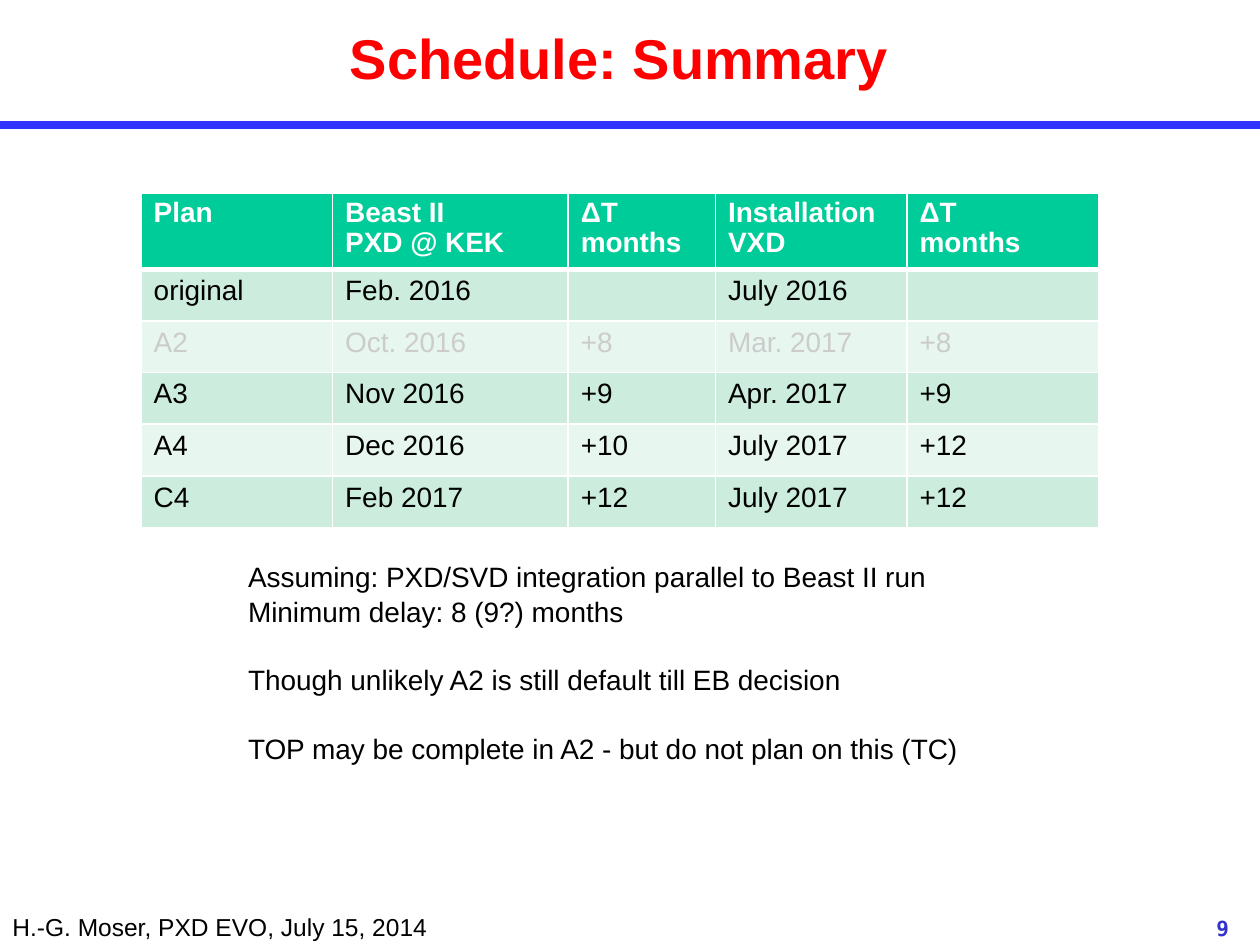
from lxml import etree
from pptx import Presentation
from pptx.dml.color import RGBColor
from pptx.enum import shapes, text
from pptx.oxml import ns
from pptx.util import Inches, Pt

HUES = {"blue": "3333FF", "page": "3333CC", "red": "FF0000", "black": "000000",
        "white": "FFFFFF", "grey": "CCCCCC", "head": "00CC99",
        "dark": "CCECDE", "light": "E7F6EF"}


def write(frame, lines, size=16, hue="black", bold=False, font="Arial",
          align=None, space=None, gaps=()):
    for i, line in enumerate(lines):
        para = frame.paragraphs[0] if i == 0 else frame.add_paragraph()
        para.alignment = align
        para.line_spacing = space
        if i in gaps:
            para.space_before = Pt(19.2)
        run = para.add_run()
        run.text = line
        run.font.size = Pt(size)
        run.font.bold = bold
        run.font.name = font
        run.font.color.rgb = RGBColor.from_string(HUES[hue])


def edge(cell, sides):
    props = cell._tc.get_or_add_tcPr()
    for i, (side, width) in enumerate(sides.items()):
        line = etree.Element(ns.qn("a:" + side), w=str(Pt(width)))
        fill = etree.SubElement(line, ns.qn("a:solidFill"))
        etree.SubElement(fill, ns.qn("a:srgbClr"), val=HUES["white"])
        props.insert(i, line)


deck = Presentation()
deck.slide_width, deck.slide_height = Inches(10), Inches(7.5)
slide = deck.slides.add_slide(deck.slide_layouts[6])

rule = slide.shapes.add_connector(shapes.MSO_CONNECTOR.STRAIGHT, Inches(0),
                                  Inches(0.99), Inches(10), Inches(0.99))
rule.line.color.rgb = RGBColor.from_string(HUES["blue"])
rule.line.width = Pt(4.5)
etree.SubElement(rule._element.spPr, ns.qn("a:effectLst"))

mid = text.PP_ALIGN.CENTER
notes = ["Assuming: PXD/SVD integration parallel to Beast II run",
         "Minimum delay: 8 (9?) months",
         "Though unlikely A2 is still default till EB decision",
         "TOP may be complete in A2 - but do not plan on this (TC)"]
boxes = [
    ((0, 7.19, 3.51, 0.34), False, ["H.-G. Moser, PXD EVO, July 15, 2014"],
     dict(size=14)),
    ((0.98, 0, 7.87, 0.91), True, ["Schedule: Summary"],
     dict(size=32, hue="red", bold=True, align=mid)),
    ((9.41, 7.22, 0.59, 0.28), True, ["9"],
     dict(size=12, hue="page", bold=True, font="DejaVu Sans Mono", align=mid)),
    ((1.87, 4.38, 5.91, 1.72), False, notes, dict(space=1.04, gaps=(2, 3))),
]
for area, wrap, lines, style in boxes:
    box = slide.shapes.add_textbox(*map(Inches, area))
    box.text_frame.word_wrap = wrap
    if lines == ["Schedule: Summary"]:
        box.text_frame.vertical_anchor = text.MSO_ANCHOR.MIDDLE
    write(box.text_frame, lines, **style)

rows = [
    ["Plan", "Beast II\nPXD @ KEK", "ΔT\nmonths", "Installation VXD", "ΔT\nmonths"],
    ["original", "Feb. 2016", "", "July 2016", ""],
    ["A2", "Oct. 2016", "+8", "Mar. 2017", "+8"],
    ["A3", "Nov 2016", "+9", "Apr. 2017", "+9"],
    ["A4", "Dec 2016", "+10", "July 2017", "+12"],
    ["C4", "Feb 2017", "+12", "July 2017", "+12"],
]
wide = [1.52, 1.87, 1.17, 1.52, 1.52]
high = 0.41
table = slide.shapes.add_table(len(rows), len(wide), Inches(1.12), Inches(1.53),
                               Inches(sum(wide)), Inches(high * len(rows))).table
for col, width in zip(table.columns, wide):
    col.width = Inches(width)
for r, row in enumerate(rows):
    table.rows[r].height = Inches(high)
    top = r == 0
    back = "head" if top else "dark" if r % 2 else "light"
    hue = "white" if top else "grey" if row[0] == "A2" else "black"
    for c, words in enumerate(row):
        cell = table.cell(r, c)
        cell.fill.solid()
        cell.fill.fore_color.rgb = RGBColor.from_string(HUES[back])
        edge(cell, {"lnL": 1, "lnR": 1, "lnT": 3 if r == 1 else 1,
                    "lnB": 3 if top else 1})
        if words:
            write(cell.text_frame, words.split("\n"), hue=hue, bold=top,
                  space=0.95 if top else None)

deck.save("out.pptx")
